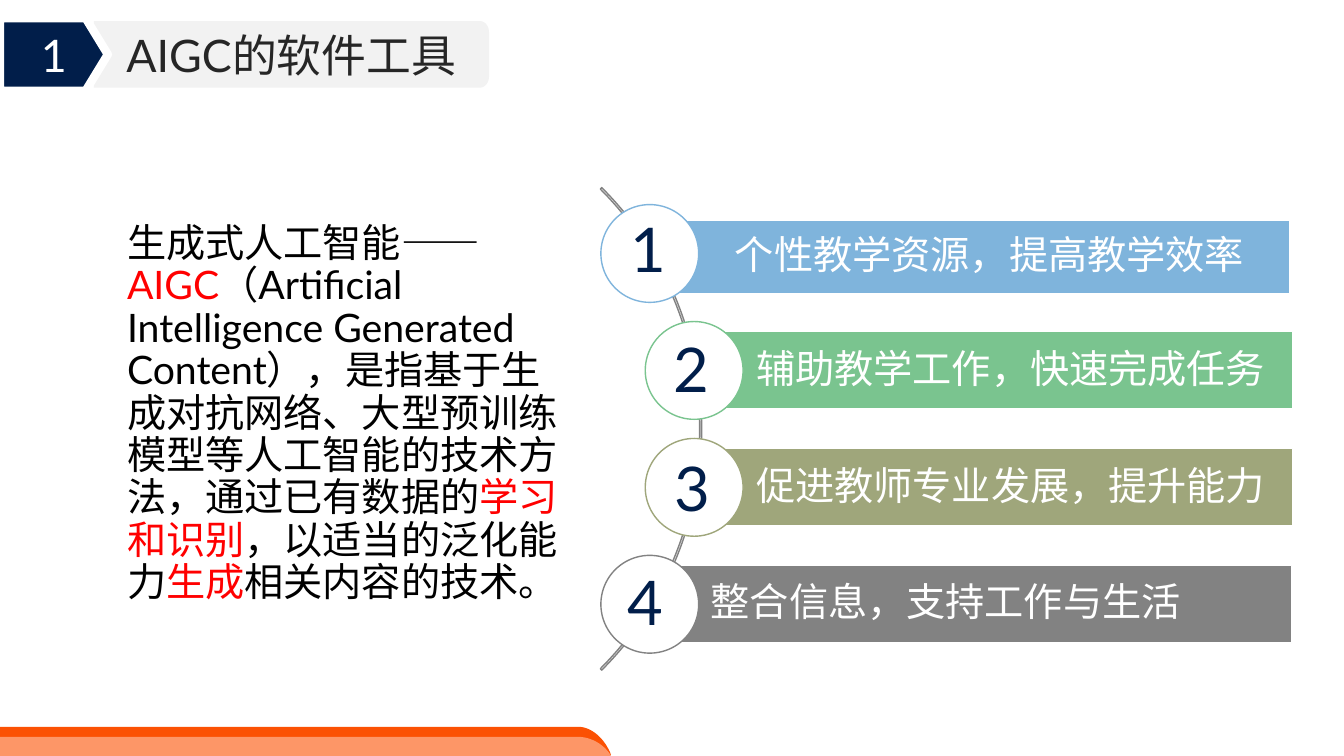
from pptx import Presentation
from pptx.dml.color import RGBColor
from pptx.enum.shapes import MSO_SHAPE as Preset
from pptx.enum.text import MSO_ANCHOR as Anchor, MSO_AUTO_SIZE as Fit, PP_ALIGN as Align
from pptx.util import Inches, Pt
from lxml.etree import SubElement
from pptx.oxml.ns import qn

FONT = "Lato"
HUES = {
    "navy": "011E4A", "white": "FFFFFF", "black": "000000", "red": "FF0000",
    "ink": "262626", "pale": "F2F2F2", "orange": "FB5103", "peach": "FD9667",
    "blue": "7FB4DC", "green": "7AC48F", "olive": "9FA67B", "gray": "828282",
}
PAD = (0.61, 0.08, 0.08, 0.08)
ITEMS = [
    ("blue", "个性教学资源，提高教学效率", (6.68, 2.19, 6.11, 0.72), 5.96, (6.16, 2.04)),
    ("green", "辅助教学工作，快速完成任务", (6.89, 3.29, 5.93, 0.77), 6.4, (6.59, 3.23)),
    ("olive", "促进教师专业发展，提升能力", (6.89, 4.45, 5.93, 0.77), 6.4, (6.6, 4.41)),
    ("gray", "整合信息，支持工作与生活", (6.44, 5.61, 6.37, 0.77), 5.96, (6.13, 5.55)),
]
INTRO = [
    ("生成式人工智能——", "black"),
    ("AIGC", "red"),
    ("（Artificial Intelligence Generated Content），是指基于生成对抗网络、"
     "大型预训练模型等人工智能的技术方法，通过已有数据的", "black"),
    ("学习和识别", "red"),
    ("，以适当的泛化能力", "black"),
    ("生成", "red"),
    ("相关内容的技术。", "black"),
]


def hue(name):
    return RGBColor.from_string(HUES[name])


def write(shape, runs, size=28, color="white", align=Align.LEFT,
          anchor=Anchor.MIDDLE, pad=(0, 0, 0, 0), space=1.0):
    frame = shape.text_frame
    frame.word_wrap = True
    frame.auto_size = Fit.NONE
    frame.vertical_anchor = anchor
    (frame.margin_left, frame.margin_top,
     frame.margin_right, frame.margin_bottom) = map(Inches, pad)
    para = frame.paragraphs[0]
    props = para._p.get_or_add_pPr()
    props.set("marL", "0")
    props.set("indent", "0")
    SubElement(props, qn("a:buNone"))
    para.alignment = align
    para.line_spacing = space
    para.space_before = Pt(0)
    for text, tint in [(runs, color)] if isinstance(runs, str) else runs:
        run = para.add_run()
        run.text = text
        run.font.name = FONT
        run.font.size = Pt(size)
        run.font.bold = False
        run.font.color.rgb = hue(tint)


def paint(shape, fill=None, line=None, width=1):
    shape.shadow.inherit = False
    if fill:
        shape.fill.solid()
        shape.fill.fore_color.rgb = hue(fill)
    else:
        shape.fill.background()
    if line:
        shape.line.color.rgb = hue(line)
        shape.line.width = Pt(width)
    else:
        shape.line.fill.background()
    return shape


def place(shape, box):
    shape.left, shape.top, shape.width, shape.height = map(Inches, box)


def draw(slide, kind, box, **style):
    return paint(slide.shapes.add_shape(kind, *map(Inches, box)), **style)


def curve(a, b, c, d, steps=12):
    for i in range(steps + 1):
        t = i / steps
        u = 1 - t
        yield tuple(u**3 * p + 3 * u * u * t * q + 3 * u * t * t * r + t**3 * s
                    for p, q, r, s in zip(a, b, c, d))


def trace(slide, points, **style):
    dots = [(Inches(x), Inches(y)) for x, y in points]
    pen = slide.shapes.build_freeform(*dots[0], scale=1.0)
    pen.add_line_segments(dots[1:], close=True)
    return paint(pen.convert_to_shape(), **style)


def band(slide, top, mid, low, end, fill):
    bend = curve((5.73, top), (5.86, top), (5.98, mid), (6.05, low))
    trace(slide, [(0, top), *bend, (6.06, end), (0, end)], fill=fill)


def header(slide):
    upper = curve((4.76, 0.21), (4.81, 0.21), (4.85, 0.26), (4.85, 0.32))
    lower = curve((4.85, 0.76), (4.85, 0.82), (4.81, 0.87), (4.76, 0.87))
    trace(slide, [(0.93, 0.21), *upper, *lower, (0.93, 0.87)], fill="pale")
    title = slide.shapes.title
    place(title, (0.93, 0.21, 3.92, 0.66))
    write(title, "AIGC的软件工具", size=32, color="ink", align=Align.CENTER)
    slide.shapes.element.append(title.element)
    tag = trace(slide, [(0, 0.18), (0.85, 0.18), (1.07, 0.54), (0.85, 0.9), (0, 0.9)],
                fill="navy", line="white", width=6)
    write(tag, "1", size=32, align=Align.CENTER)


def entry(slide, num, color, text, box, left, spot):
    bar = draw(slide, Preset.RECTANGLE, box, fill=color, line="white")
    write(bar, text, pad=PAD, space=0.9)
    draw(slide, Preset.OVAL, (left, 2.03 + 1.16 * (num - 1), 0.97, 0.97),
         fill="white", line=color)
    digit = slide.shapes.add_textbox(*map(Inches, (*spot, 0.54, 0.84)))
    write(digit, str(num), size=44, color="navy", align=Align.CENTER,
          anchor=Anchor.TOP, pad=(0, 0.05, 0, 0.05))


def main():
    deck = Presentation()
    deck.slide_width, deck.slide_height = Inches(13.33), Inches(7.5)
    slide = deck.slides.add_slide(deck.slide_layouts[1])
    band(slide, 7.21, 7.31, 7.46, 7.49, "orange")
    header(slide)
    band(slide, 7.31, 7.38, 7.48, 7.5, "peach")
    arc = draw(slide, Preset.BLOCK_ARC, (0.19, 0.87, 6.77, 6.77), line="gray")
    for i, value in enumerate((189, 27, 0.003)):
        arc.adjustments[i] = value
    for num, item in enumerate(ITEMS, 1):
        entry(slide, num, *item)
    body = slide.placeholders[1]
    place(body, (0.65, 2.04, 5, 4.14))
    write(body, INTRO, pad=PAD, space=0.9)
    slide.shapes.element.append(body.element)
    deck.save("out.pptx")


if __name__ == "__main__":
    main()
